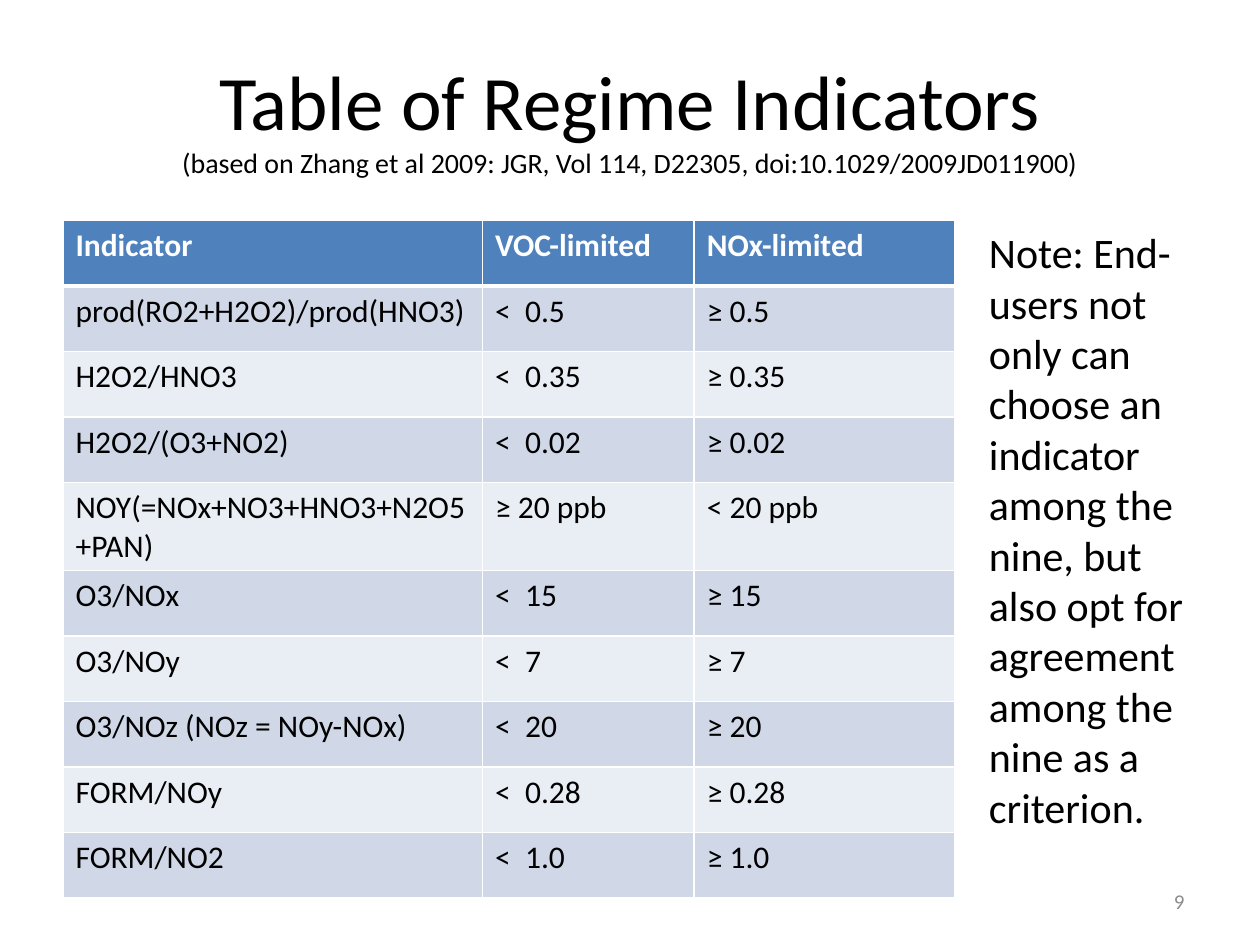
from lxml import etree
from pptx import Presentation
from pptx.dml.color import RGBColor
from pptx.enum.text import MSO_ANCHOR, PP_ALIGN
from pptx.oxml.ns import qn
from pptx.util import Inches, Pt

LEFT, CENTER, RIGHT = PP_ALIGN.LEFT, PP_ALIGN.CENTER, PP_ALIGN.RIGHT
TOP, MIDDLE = MSO_ANCHOR.TOP, MSO_ANCHOR.MIDDLE

FONT = "Calibri"
BLACK = RGBColor(0x00, 0x00, 0x00)
WHITE = RGBColor(0xFF, 0xFF, 0xFF)
GRAY = RGBColor(0x8C, 0x8C, 0x8C)
HEADER_BLUE = RGBColor(0x4F, 0x81, 0xBD)
BANDS = (RGBColor(0xD0, 0xD8, 0xE8), RGBColor(0xE9, 0xED, 0xF4))

COLUMN_WIDTHS = (3.33, 1.68, 2.07)
ROW_HEIGHT = 0.52
INDICATORS = [
    ("Indicator", "VOC-limited", "NOx-limited"),
    ("prod(RO2+H2O2)/prod(HNO3)", "<  0.5", "≥ 0.5"),
    ("H2O2/HNO3", "<  0.35", "≥ 0.35"),
    ("H2O2/(O3+NO2)", "<  0.02", "≥ 0.02"),
    ("NOY(=NOx+NO3+HNO3+N2O5+PAN)", "≥ 20 ppb", "< 20 ppb"),
    ("O3/NOx", "<  15", "≥ 15"),
    ("O3/NOy", "<  7", "≥ 7"),
    ("O3/NOz (NOz = NOy-NOx)", "<  20", "≥ 20"),
    ("FORM/NOy", "<  0.28", "≥ 0.28"),
    ("FORM/NO2", "<  1.0", "≥ 1.0"),
]


def add_span(para, text, size, color=BLACK, bold=False):
    span = para.add_run()
    span.text = text
    span.font.name = FONT
    span.font.size = Pt(size)
    span.font.bold = bold
    span.font.color.rgb = color


def add_text_box(page, left, top, width, height, align=LEFT, anchor=TOP):
    """Add an empty wrapping text box and return its first paragraph."""
    box = page.shapes.add_textbox(
        Inches(left), Inches(top), Inches(width), Inches(height))
    frame = box.text_frame
    frame.word_wrap = True
    frame.vertical_anchor = anchor
    para = frame.paragraphs[0]
    para.alignment = align
    return para


def set_borders(cell, top=1, bottom=1):
    """Draw white cell borders, widths in points."""
    properties = cell._tc.get_or_add_tcPr()
    sides = {"a:lnL": 1, "a:lnR": 1, "a:lnT": top, "a:lnB": bottom}
    for tag, width in sides.items():
        line = etree.SubElement(properties, qn(tag), w=str(Pt(width)))
        fill = etree.SubElement(line, qn("a:solidFill"))
        etree.SubElement(fill, qn("a:srgbClr"), val=str(WHITE))


def add_indicator_table(page, left, top):
    frame = page.shapes.add_table(
        len(INDICATORS), len(COLUMN_WIDTHS), Inches(left), Inches(top),
        Inches(sum(COLUMN_WIDTHS)), Inches(ROW_HEIGHT * len(INDICATORS)))
    table = frame.table
    for column, width in zip(table.columns, COLUMN_WIDTHS):
        column.width = Inches(width)
    for row_index, values in enumerate(INDICATORS):
        table.rows[row_index].height = Inches(ROW_HEIGHT)
        header = row_index == 0
        for column_index, value in enumerate(values):
            cell = table.cell(row_index, column_index)
            # A thick rule parts the header from the body
            set_borders(cell, top=3 if row_index == 1 else 1,
                        bottom=3 if header else 1)
            cell.fill.solid()
            cell.fill.fore_color.rgb = (
                HEADER_BLUE if header else BANDS[(row_index - 1) % 2])
            add_span(cell.text_frame.paragraphs[0], value, 18,
                     WHITE if header else BLACK, header)


def main():
    deck = Presentation()
    deck.slide_width, deck.slide_height = Inches(10), Inches(7.5)
    page = deck.slides.add_slide(deck.slide_layouts[6])

    # Title and its source
    title = add_text_box(page, 0.5, 0.3, 9, 1.25, CENTER, MIDDLE)
    add_span(title, "Table of Regime Indicators", 44)
    title.add_line_break()
    add_span(title, "(based on Zhang et al 2009: JGR, Vol 114, D22305, "
                    "doi:10.1029/2009JD011900)", 16)

    # Thresholds
    add_indicator_table(page, 0.5, 1.75)

    # Page number
    number = add_text_box(page, 7.17, 6.95, 2.33, 0.4, RIGHT, MIDDLE)
    add_span(number, "9", 12, GRAY)

    # Side note
    note = add_text_box(page, 7.75, 1.75, 1.92, 4.95)
    add_span(note, "Note: End-users not only can choose an indicator among "
                   "the nine, but also opt for agreement among the nine as "
                   "a criterion.", 24)

    deck.save("out.pptx")


if __name__ == "__main__":
    main()
